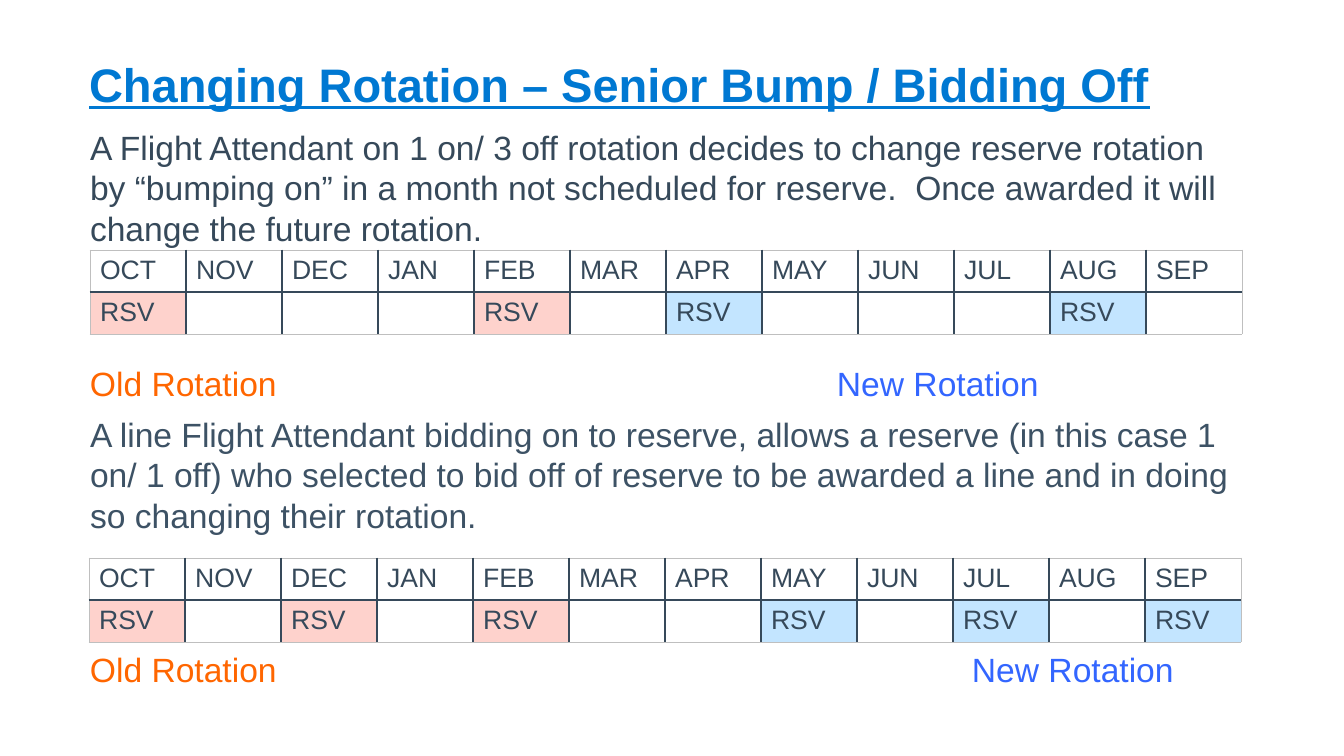
"""Build the slide on changing a reserve rotation."""
import pptx
import pptx.dml.color
import pptx.enum.text
import pptx.oxml
import pptx.oxml.ns
import pptx.util

HUES = {"title": "0078D2", "ink": "36495A", "soft": "3D5265", "old": "FF6600",
        "new": "3366FF", "pink": "FED2CC", "sky": "C3E5FF", "edge": "BFBFBF"}
FONT = "Arial"
TITLE = "Changing Rotation – Senior Bump / Bidding Off"
TEXTS = [
    (127, 122, 90, 1159, "ink",
     "A Flight Attendant on 1 on/ 3 off rotation decides to change reserve rotation "
     "by “bumping on” in a month not scheduled for reserve.  Once awarded it will "
     "change the future rotation."),
    (363, 41, 90, 300, "old", "Old Rotation"),
    (363, 41, 837, 300, "new", "New Rotation"),
    (414, 122, 90, 1159, "soft",
     "A line Flight Attendant bidding on to reserve, allows a reserve (in this case 1 "
     "on/ 1 off) who selected to bid off of reserve to be awarded a line and in doing "
     "so changing their rotation."),
    (649, 41, 90, 300, "old", "Old Rotation"),
    (649, 41, 972, 300, "new", "New Rotation"),
]
MONTHS = "OCT NOV DEC JAN FEB MAR APR MAY JUN JUL AUG SEP".split()
GRIDS = [
    (90, 250, {"OCT": "pink", "FEB": "pink", "APR": "sky", "AUG": "sky"}),
    (89, 558, {"OCT": "pink", "DEC": "pink", "FEB": "pink",
               "MAY": "sky", "JUL": "sky", "SEP": "sky"}),
]
COL, ROWS = 96, (42, 41)


def px(num):
    return round(num * 914400 / 100.8)


def rgb(hue):
    return pptx.dml.color.RGBColor.from_string(HUES[hue])


def write(par, text, size, hue, bold=False):
    run = par.add_run()
    run.text = text
    font = run.font
    font.name, font.size = FONT, pptx.util.Pt(size)
    font.color.rgb = rgb(hue)
    if bold:
        font.bold = font.underline = True


def box(slide, left, top, width, height):
    frame = slide.shapes.add_textbox(px(left), px(top), px(width), px(height)).text_frame
    frame.word_wrap = True
    frame.margin_left = frame.margin_right = frame.margin_top = frame.margin_bottom = 0
    return frame


def rule(cell, sides):
    props = cell._tc.get_or_add_tcPr()
    for spot, (side, outer) in enumerate(sides):
        hue, width = ("edge", 6350) if outer else ("ink", 12700)
        props.insert(spot, pptx.oxml.parse_xml(
            f'<a:ln{side} {pptx.oxml.ns.nsdecls("a")} w="{width}"><a:solidFill>'
            f'<a:srgbClr val="{HUES[hue]}"/></a:solidFill></a:ln{side}>'))


def grid(slide, left, top, marks):
    last = len(MONTHS) - 1
    table = slide.shapes.add_table(2, len(MONTHS), px(left), px(top),
                                   px(COL * len(MONTHS)), px(sum(ROWS))).table
    table.first_row = table.horz_banding = False
    for row, high in zip(table.rows, ROWS):
        row.height = px(high)
    for c, month in enumerate(MONTHS):
        table.columns[c].width = px(COL)
        for r, text in enumerate((month, "RSV" if month in marks else "")):
            cell = table.cell(r, c)
            if text:
                write(cell.text_frame.paragraphs[0], text, 19, "ink")
            if r and text:
                cell.fill.solid()
                cell.fill.fore_color.rgb = rgb(marks[month])
            else:
                cell.fill.background()
            rule(cell, [("L", c == 0), ("R", c == last), ("T", r == 0), ("B", r == 1)])


def main():
    deck = pptx.Presentation()
    deck.slide_width, deck.slide_height = px(1344), px(756)
    slide = deck.slides.add_slide(deck.slide_layouts[6])
    head = box(slide, 89, 28, 1159, 84)
    head.vertical_anchor = pptx.enum.text.MSO_ANCHOR.BOTTOM
    write(head.paragraphs[0], TITLE, 33.6, "title", True)
    for top, high, left, width, hue, text in TEXTS:
        par = box(slide, left, top, width, high).paragraphs[0]
        par.line_spacing = 1.0
        write(par, text, 24, hue)
    for left, top, marks in GRIDS:
        grid(slide, left, top, marks)
    deck.save("out.pptx")


if __name__ == "__main__":
    main()
